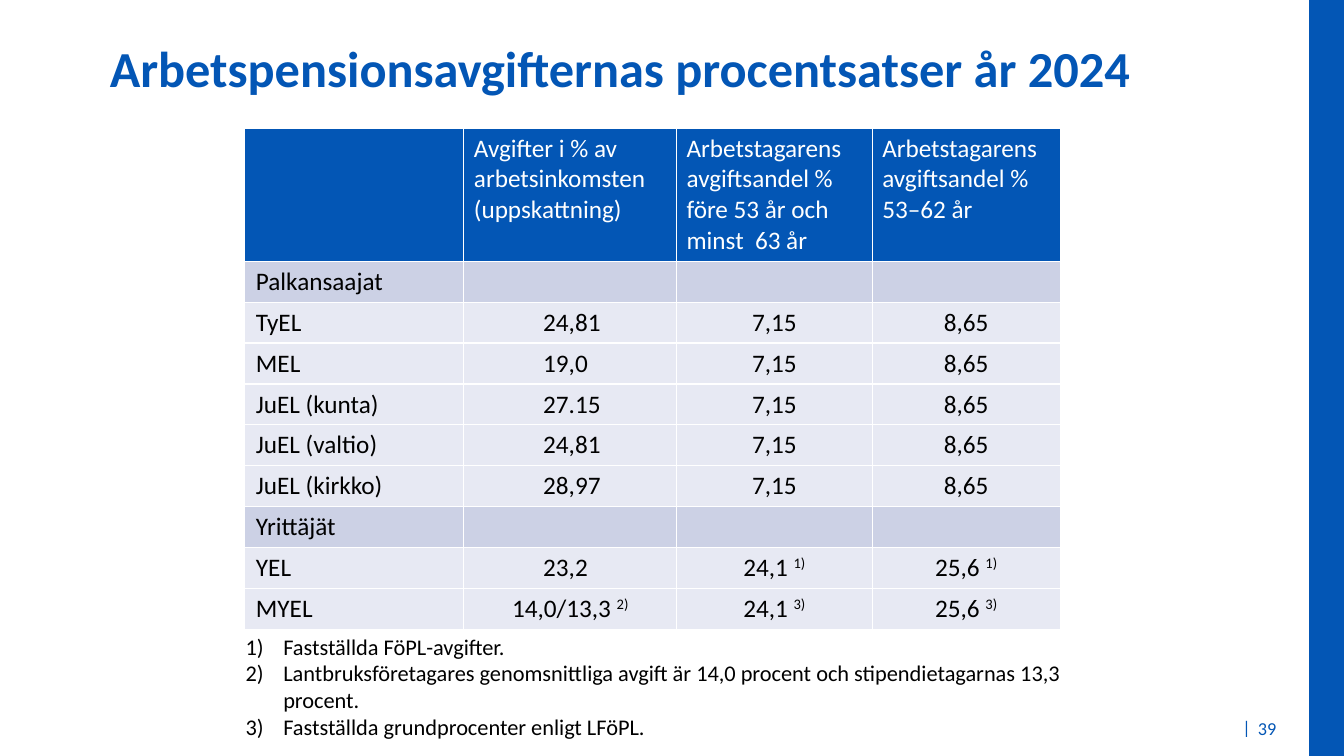
"""Build the slide on pension contribution rates for 2024."""
from dataclasses import dataclass, field
from typing import Any

from lxml.etree import SubElement
from pptx import Presentation
from pptx.dml.color import RGBColor
from pptx.enum.shapes import MSO_SHAPE
from pptx.enum.text import MSO_ANCHOR, PP_ALIGN
from pptx.oxml.ns import qn
from pptx.util import Cm, Pt

BLUE = RGBColor(0x03, 0x56, 0xB5)
BAND = RGBColor(0xCC, 0xD1, 0xE5)
PALE = RGBColor(0xE7, 0xE9, 0xF3)
BLACK = RGBColor(0, 0, 0)
WHITE = RGBColor(255, 255, 255)

WIDTHS = (5.54, 5.36, 4.93, 4.74)
HEAD_TALL, ROW_TALL = 3.3, 1.03
HEADS = (
    ("",),
    ("Avgifter i % av arbetsinkomsten (uppskattning)",),
    ("Arbetstagarens avgiftsandel %", "före 53 år och minst  63 år"),
    ("Arbetstagarens avgiftsandel %", "53–62 år"),
)
ROWS = (
    ("Palkansaajat", "", "", ""),
    ("TyEL", "24,81", "7,15", "8,65"),
    ("MEL", "19,0", "7,15", "8,65"),
    ("JuEL (kunta)", "27.15", "7,15", "8,65"),
    ("JuEL (valtio)", "24,81", "7,15", "8,65"),
    ("JuEL (kirkko)", "28,97", "7,15", "8,65"),
    ("Yrittäjät", "", "", ""),
    ("YEL", "23,2", "24,1 1)", "25,6 1)"),
    ("MYEL", "14,0/13,3 2)", "24,1 3)", "25,6 3)"),
)


@dataclass
class Label:
    """Text box with its place in centimetres."""
    lines: tuple[str, ...]
    place: tuple[float, float, float, float]
    size: int
    color: RGBColor = BLUE
    list_item: bool = False
    font: dict[str, Any] = field(default_factory=dict)
    frame: dict[str, Any] = field(default_factory=dict)
    para: dict[str, Any] = field(default_factory=dict)


LABELS = (
    Label(("|",), (31.06, 17.93, 0.74, 0.89), 13, frame={"word_wrap": False}),
    Label(("Arbetspensionsavgifternas procentsatser år 2024",),
          (0.33, 0.74, 30.61, 2.13), 36, font={"bold": True},
          frame={"vertical_anchor": MSO_ANCHOR.MIDDLE},
          para={"alignment": PP_ALIGN.CENTER, "line_spacing": 0.9}),
    Label(("Fastställda FöPL-avgifter.",
           "Lantbruksföretagares genomsnittliga avgift är 14,0 procent "
           "och stipendietagarnas 13,3 procent.",
           "Fastställda grundprocenter enligt LFöPL."),
          (5.94, 15.82, 22, 3), 16, BLACK, True),
    Label(("39",), (31.45, 17.91, 1.12, 0.89), 13,
          frame={"vertical_anchor": MSO_ANCHOR.MIDDLE}),
)


def apply(target: Any, values: dict[str, Any]) -> None:
    """Set each named value on the target."""
    for name, value in values.items():
        setattr(target, name, value)


def add_run(para: Any, text: str, size: int, color: RGBColor,
            font: dict[str, Any]) -> Any:
    """Add a run in the slide's font."""
    run = para.add_run()
    run.text = text
    apply(run.font, {"name": "Calibri", "size": Pt(size), "bold": False} | font)
    run.font.color.rgb = color
    return run


def number(para: Any) -> None:
    """Give a paragraph a hanging number."""
    props = para._p.get_or_add_pPr()
    apply_xml = {"marL": str(Cm(0.95)), "indent": str(Cm(-0.95))}
    props.attrib.update(apply_xml)
    SubElement(props, qn("a:buFont"), typeface="+mj-lt")
    SubElement(props, qn("a:buAutoNum"), type="arabicParenR")


def add_label(slide: Any, label: Label) -> None:
    """Draw one text box."""
    frame = slide.shapes.add_textbox(*map(Cm, label.place)).text_frame
    apply(frame, {"word_wrap": True} | label.frame)
    for index, line in enumerate(label.lines):
        para = frame.add_paragraph() if index else frame.paragraphs[0]
        apply(para, label.para)
        if label.list_item:
            number(para)
        add_run(para, line, label.size, label.color, label.font)


def fill_cell(cell: Any, lines: tuple[str, ...], fill: RGBColor,
              color: RGBColor, form: dict[str, Any], align: Any) -> None:
    """Write and colour one cell, raising any note mark."""
    apply(cell, form)
    for index, line in enumerate(lines):
        para = cell.text_frame.add_paragraph() if index else cell.text_frame.paragraphs[0]
        para.alignment = align
        para.font.size = Pt(18)
        text, gap, mark = line.rpartition(" ") if line.endswith(")") and line[-2].isdigit() else (line, "", "")
        if text:
            add_run(para, text + gap, 18, color, {})
        if mark:
            note = add_run(para, mark, 18, color, {})
            note._r.get_or_add_rPr().set("baseline", "30000")
    props = cell._tc.get_or_add_tcPr()
    for side in ("lnL", "lnR", "lnT", "lnB"):
        edge = SubElement(props, qn(f"a:{side}"), w=str(Pt(1)))
        paint = SubElement(edge, qn("a:solidFill"))
        SubElement(paint, qn("a:srgbClr"), val=str(WHITE))
    cell.fill.solid()
    cell.fill.fore_color.rgb = fill


def add_rates(slide: Any) -> None:
    """Draw the table of rates."""
    tall = HEAD_TALL + ROW_TALL * len(ROWS)
    place = map(Cm, (6.15, 3.23, sum(WIDTHS), tall))
    table = slide.shapes.add_table(len(ROWS) + 1, len(WIDTHS), *place).table
    table.horz_banding = False
    for col, width in enumerate(WIDTHS):
        table.columns[col].width = Cm(width)
        fill_cell(table.cell(0, col), HEADS[col], BLUE, WHITE, {}, None)
    table.rows[0].height = Cm(HEAD_TALL)
    for row, texts in enumerate(ROWS, 1):
        table.rows[row].height = Cm(ROW_TALL)
        for col, text in enumerate(texts):
            form, align = {}, PP_ALIGN.CENTER
            if col == 0:
                form, align = {"margin_left": Cm(0.3)}, None
            elif col == 1 and not text.endswith(")"):
                form, align = {"margin_left": Cm(2), "margin_right": Cm(0.7)}, None
            fill = PALE if texts[1] else BAND
            fill_cell(table.cell(row, col), (text,), fill, BLACK, form, align)


def main() -> None:
    """Build and save the deck."""
    deck = Presentation()
    apply(deck, {"slide_width": Cm(33.87), "slide_height": Cm(19.05)})
    slide = deck.slides.add_slide(deck.slide_layouts[6])
    bar = slide.shapes.add_shape(
        MSO_SHAPE.RECTANGLE, *map(Cm, (32.99, 0, 0.88, 19.05)))
    bar.shadow.inherit = False
    bar.fill.solid()
    bar.fill.fore_color.rgb = BLUE
    bar.line.fill.background()
    add_rates(slide)
    for label in LABELS:
        add_label(slide, label)
    deck.save("out.pptx")


if __name__ == "__main__":
    main()
